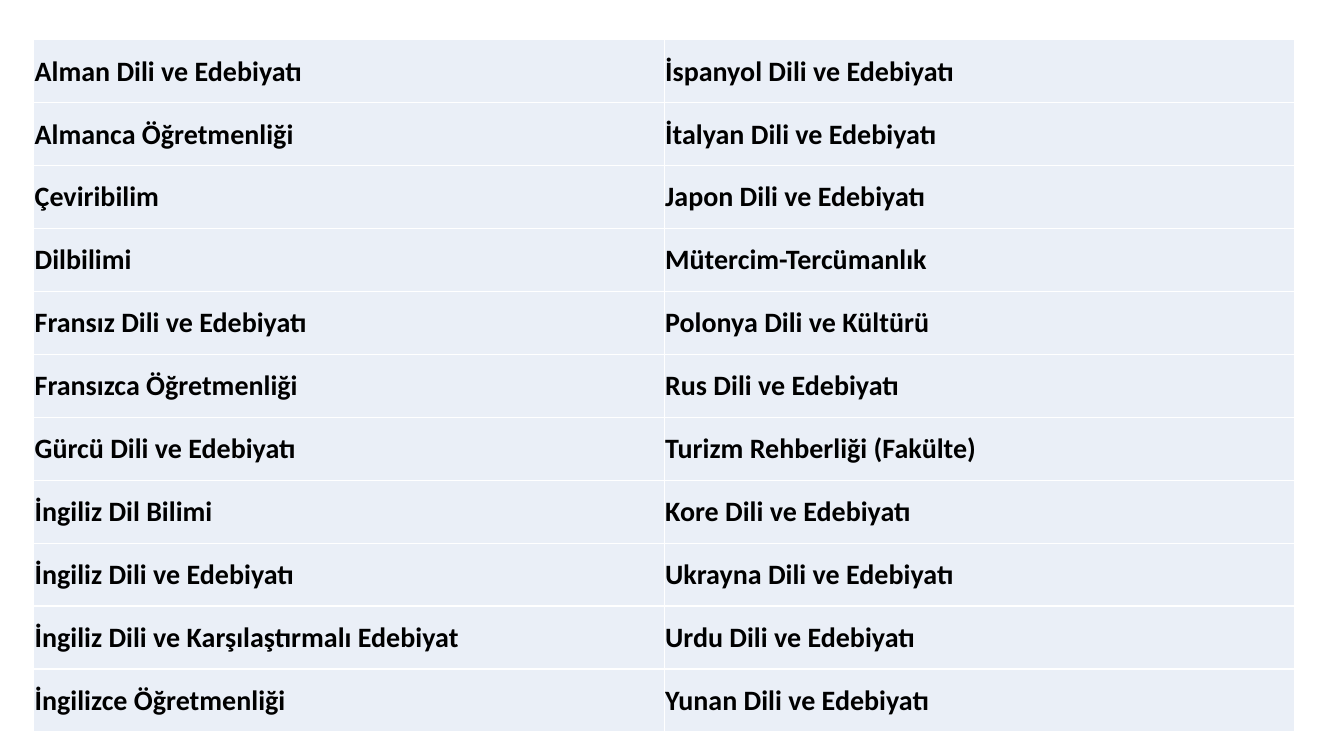
from lxml import etree
from pptx import Presentation
from pptx import util as u
from pptx.dml.color import RGBColor
from pptx.enum import text
from pptx.oxml.ns import qn

PALE_BLUE = RGBColor(0xEA, 0xEF, 0xF7)
BLACK = RGBColor(0, 0, 0)
WHITE = RGBColor(0xFF, 0xFF, 0xFF)

PROGRAMMES = [
    ("Alman Dili ve Edebiyatı", "İspanyol Dili ve Edebiyatı"),
    ("Almanca Öğretmenliği", "İtalyan Dili ve Edebiyatı"),
    ("Çeviribilim", "Japon Dili ve Edebiyatı"),
    ("Dilbilimi", "Mütercim-Tercümanlık"),
    ("Fransız Dili ve Edebiyatı", "Polonya Dili ve Kültürü"),
    ("Fransızca Öğretmenliği", "Rus Dili ve Edebiyatı"),
    ("Gürcü Dili ve Edebiyatı", "Turizm Rehberliği (Fakülte)"),
    ("İngiliz Dil Bilimi", "Kore Dili ve Edebiyatı"),
    ("İngiliz Dili ve Edebiyatı", "Ukrayna Dili ve Edebiyatı"),
    ("İngiliz Dili ve Karşılaştırmalı Edebiyat", "Urdu Dili ve Edebiyatı"),
    ("İngilizce Öğretmenliği", "Yunan Dili ve Edebiyatı"),
]


def add_borders(cell, color, width):
    properties = cell._tc.get_or_add_tcPr()
    for side in ("a:lnL", "a:lnR", "a:lnT", "a:lnB"):
        line = etree.SubElement(properties, qn(side), w=str(width))
        solid = etree.SubElement(line, qn("a:solidFill"))
        etree.SubElement(solid, qn("a:srgbClr"), val=str(color))


# Slide
deck = Presentation()
deck.slide_width, deck.slide_height = u.Pt(960), u.Pt(540)
slide = deck.slides.add_slide(deck.slide_layouts[6])

# Two-column list of programmes
programme_list = slide.shapes.add_table(
    len(PROGRAMMES), 2, u.Pt(24.1), u.Pt(28.3), u.Pt(900.7), u.Pt(494.6)
).table
programme_list.first_row = False
programme_list.horz_banding = False

for row, names in enumerate(PROGRAMMES):
    for column, name in enumerate(names):
        cell = programme_list.cell(row, column)
        cell.text = name
        cell.vertical_anchor = text.MSO_ANCHOR.MIDDLE
        cell.margin_left = cell.margin_right = cell.margin_top = u.Pt(0.7)
        cell.margin_bottom = u.Pt(0)
        add_borders(cell, WHITE, u.Pt(1))
        cell.fill.solid()
        cell.fill.fore_color.rgb = PALE_BLUE
        font = cell.text_frame.paragraphs[0].font
        font.name, font.size, font.bold = "Calibri", u.Pt(20), True
        font.color.rgb = BLACK

deck.save("out.pptx")
